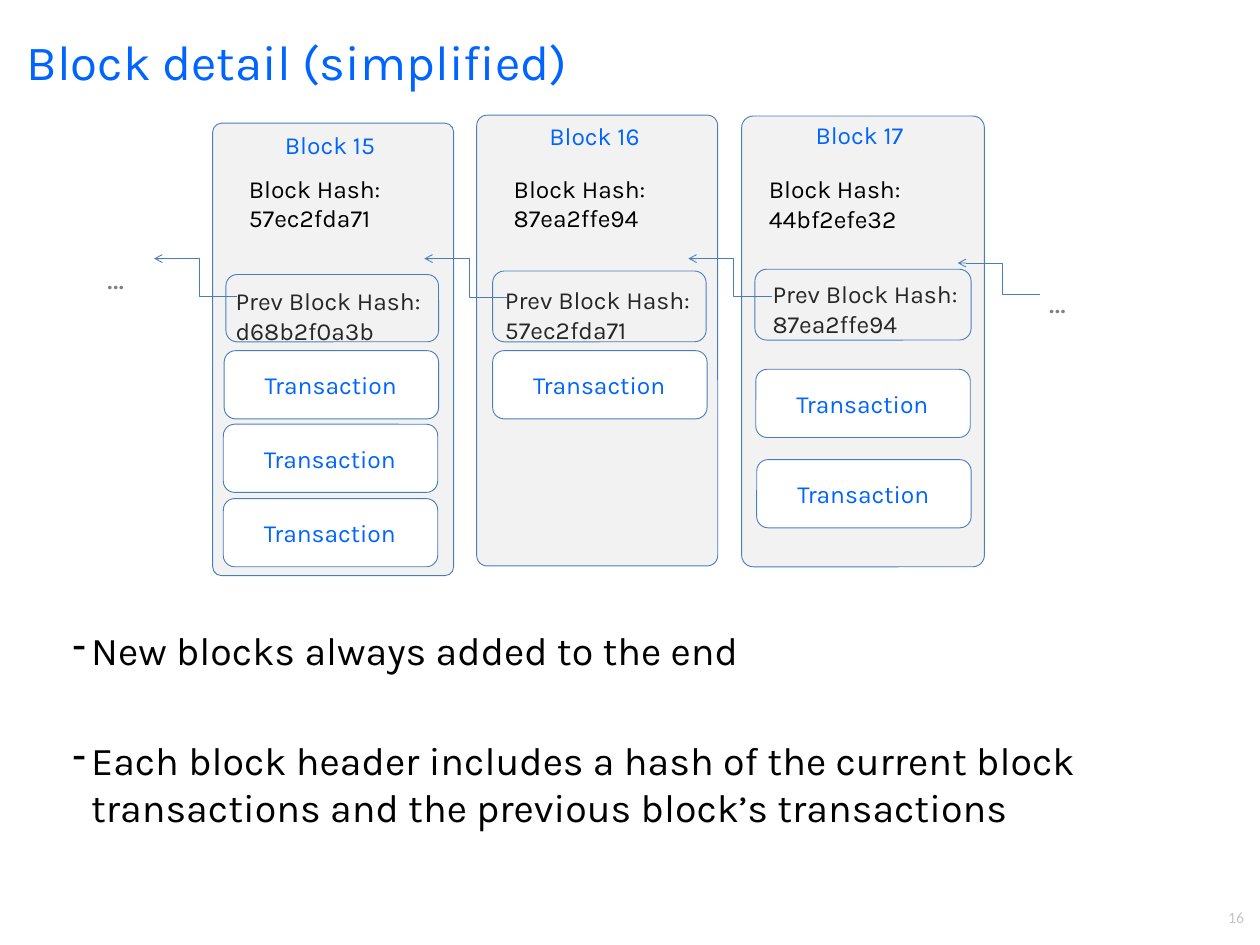
from lxml import etree
from pptx import Presentation
from pptx.dml.color import RGBColor
from pptx.enum.shapes import MSO_CONNECTOR, MSO_SHAPE
from pptx.enum.text import MSO_ANCHOR, MSO_AUTO_SIZE, PP_ALIGN
from pptx.oxml.ns import qn
from pptx.util import Inches, Pt

ROUND = MSO_SHAPE.ROUNDED_RECTANGLE
ELBOW = MSO_CONNECTOR.ELBOW
LEFT, CENTER, RIGHT = PP_ALIGN.LEFT, PP_ALIGN.CENTER, PP_ALIGN.RIGHT
TOP, MIDDLE = MSO_ANCHOR.TOP, MSO_ANCHOR.MIDDLE
NO_FIT = MSO_AUTO_SIZE.NONE

BLUE, EDGE, GREY, WHITE = "0064FF", "4A7EBB", "F2F2F2", "FFFFFF"
BLACK, DARK = "000000", "272727"

# Each block: frame, corner, heading, hash, previous hash and transactions,
# with places as left, top, width, height
BLOCKS = [
    dict(frame=(2.4, 1.39, 2.72, 5.11), corner=0.037,
         name="Block 15", head=(2.37, 1.42, 2.71, 0.44),
         hash="57ec2fda71", spot=(2.71, 1.91, 2.72, 0.77),
         prev="d68b2f0a3b", cell=(2.55, 3.1, 2.4, 0.76),
         label=(2.56, 3.18, 2.9, 0.77),
         trans=[(2.53, 3.96), (2.52, 4.79), (2.52, 5.63)]),
    dict(frame=(5.38, 1.3, 2.72, 5.09), corner=0.043,
         name="Block 16", head=(5.87, 1.32, 1.68, 0.44),
         hash="87ea2ffe94", spot=(5.7, 1.91, 2.47, 0.77),
         prev="57ec2fda71", cell=(5.56, 3.06, 2.41, 0.8),
         label=(5.6, 3.17, 2.7, 0.77),
         trans=[(5.56, 3.96)]),
    dict(frame=(8.37, 1.31, 2.74, 5.09), corner=0.048,
         name="Block 17", head=(9.01, 1.3, 1.38, 0.44),
         hash="44bf2efe32", spot=(8.58, 1.92, 2.64, 0.77),
         prev="87ea2ffe94", cell=(8.52, 3.04, 2.44, 0.8),
         label=(8.62, 3.1, 2.91, 0.77),
         trans=[(8.53, 4.17), (8.54, 5.19)]),
]

# Links: start point, then end point
LINKS = [
    (2.68, 3.35, 1.74, 2.92),
    (5.72, 3.36, 4.79, 2.92),
    (8.71, 3.35, 7.77, 2.92),
    (11.74, 3.32, 10.81, 2.97),
]

POINTS = [
    "New blocks always added to the end",
    "Each block header includes a hash of the current block "
    "transactions and the previous block’s transactions",
]


def color(code):
    return RGBColor.from_string(code)


def inches(place):
    return [Inches(n) for n in place]


def write(shape, *lines, size=20, ink=BLACK, font="Karla", align=LEFT,
          anchor=TOP, gap=0, dash=False):
    """Fill a shape with one paragraph per line."""
    frame = shape.text_frame
    frame.word_wrap = True
    frame.auto_size = NO_FIT
    frame.vertical_anchor = anchor
    for i, line in enumerate(lines):
        para = frame.add_paragraph() if i else frame.paragraphs[0]
        para.text = line
        para.alignment = align
        para.space_before = Pt(gap if i else 0)
        if dash:
            props = para._p.get_or_add_pPr()
            props.set("marL", str(Inches(0.27)))
            props.set("indent", str(Inches(-0.21)))
            etree.SubElement(props, qn("a:buChar"), char="-")
        para.font.size = Pt(size)
        para.font.name = font
        para.font.color.rgb = color(ink)


def text(slide, place, *lines, **style):
    box = slide.shapes.add_textbox(*inches(place))
    write(box, *lines, **style)


def panel(slide, place, fill=None, corner=0.167):
    shape = slide.shapes.add_shape(ROUND, *inches(place))
    shape.shadow.inherit = False
    shape.adjustments[0] = corner
    if fill:
        shape.fill.solid()
        shape.fill.fore_color.rgb = color(fill)
    else:
        shape.fill.background()
    shape.line.color.rgb = color(EDGE)
    shape.line.width = Pt(0.75)
    return shape


def deal(slide, left, top):
    """Draw one transaction."""
    shape = panel(slide, (left, top, 2.42, 0.77), WHITE)
    write(shape, "Transaction", ink=BLUE, anchor=MIDDLE)
    frame = shape.text_frame
    frame.margin_left = Inches(0.42)
    frame.margin_right = Inches(0.2)


def block(slide, data):
    panel(slide, data["frame"], GREY, data["corner"])
    text(slide, data["head"], data["name"], ink=BLUE, align=CENTER)
    text(slide, data["spot"], "Block Hash: " + data["hash"])
    panel(slide, data["cell"])
    text(slide, data["label"], "Prev Block Hash:", data["prev"], ink=DARK)
    for left, top in data["trans"]:
        deal(slide, left, top)


def link(slide, ends):
    """Draw a stepped arrow that turns a little before its middle."""
    wire = slide.shapes.add_connector(ELBOW, *inches(ends))
    wire.line.color.rgb = color(EDGE)
    wire.line.width = Pt(0.75)
    props = wire._element.spPr
    turn = props.find(qn("a:prstGeom")).get_or_add_avLst()
    etree.SubElement(turn, qn("a:gd"), name="adj1", fmla="val 45500")
    etree.SubElement(wire.line._get_or_add_ln(), qn("a:tailEnd"), type="arrow")
    etree.SubElement(props, qn("a:effectLst"))


def main():
    deck = Presentation()
    deck.slide_width, deck.slide_height = Inches(14.22), Inches(10.67)
    slide = deck.slides.add_slide(deck.slide_layouts[5])

    # Title
    title = slide.shapes.title
    title.left, title.top, title.width, title.height = inches(
        (0.2, 0.3, 12.08, 0.8))
    write(title, "Block detail (simplified)", size=40, ink=BLUE)

    # Chain of blocks
    for data in BLOCKS:
        block(slide, data)
    for ends in LINKS:
        link(slide, ends)
    for left, top in [(1.11, 2.87), (11.74, 3.13)]:
        text(slide, (left, top, 0.49, 0.53), "…", size=25.6, ink="808080")

    # Points below the chain
    text(slide, (0.66, 7.02, 12.91, 2.42), *POINTS, size=32, gap=51, dash=True)

    # Page number
    text(slide, (13.32, 10.2, 0.82, 0.32), "16", size=12.8, ink="C6C6C6",
         font="Calibri", align=RIGHT)

    deck.save("out.pptx")


if __name__ == "__main__":
    main()
